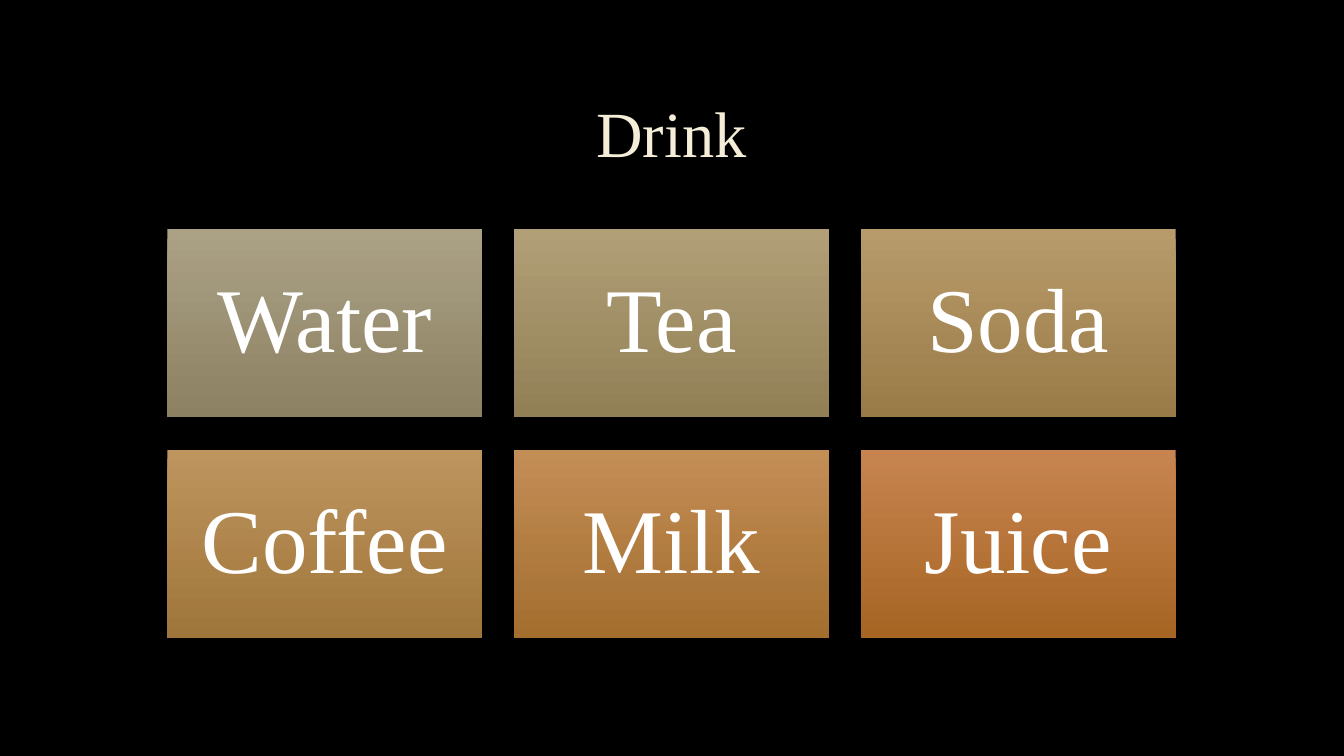
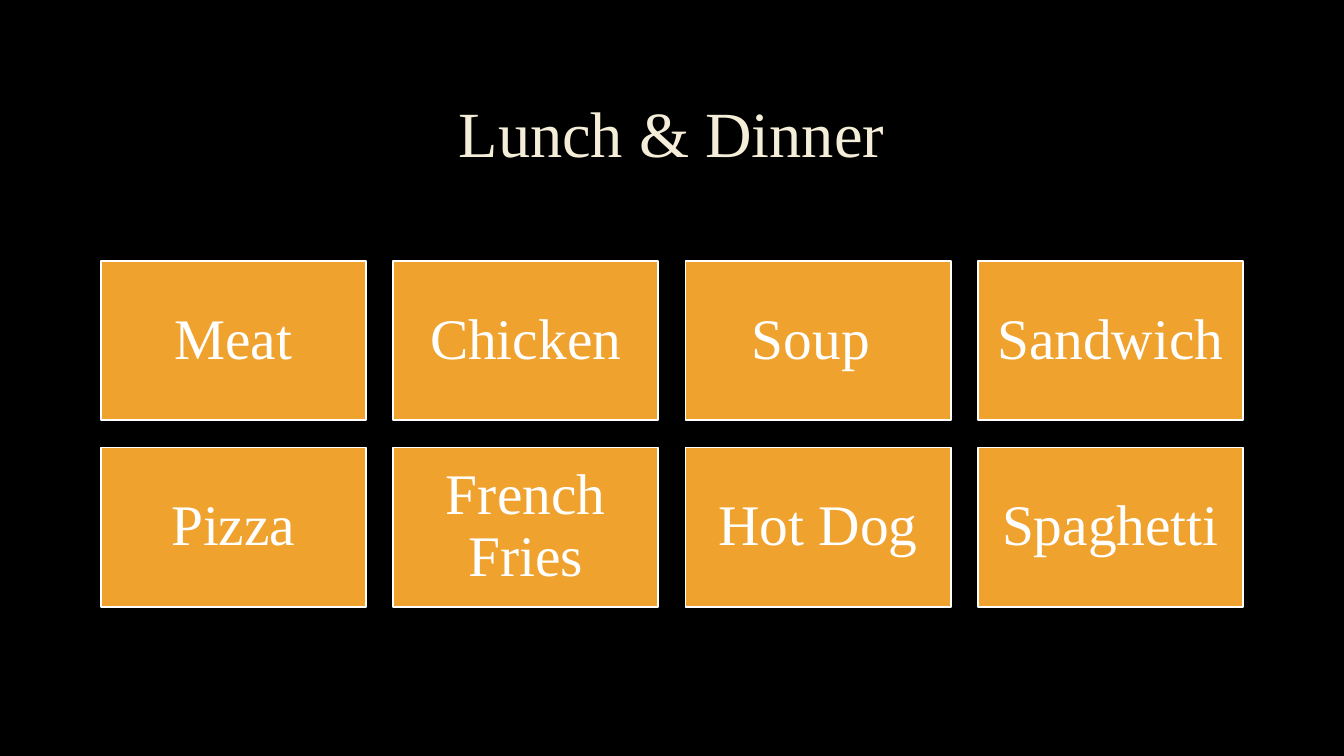
from pptx import Presentation
from pptx import util as u
from pptx.dml import color
from pptx.enum import shapes, text


def tint(code):
    return color.RGBColor.from_string(code)


class Deck:
    font = "Times New Roman"
    back, cream, white, gold = "000000", "F4EDD8", "FFFFFF", "F0A22E"

    def __init__(self):
        self.prs = Presentation()
        self.prs.slide_width = u.Inches(13.33)
        self.prs.slide_height = u.Inches(7.5)
        fill = self.prs.slide_master.background.fill
        fill.solid()
        fill.fore_color.rgb = tint(self.back)

    def label(self, shape, words, size, ink, inset):
        """Centre a label in a shape."""
        frame = shape.text_frame
        frame.word_wrap = True
        frame.auto_size = text.MSO_AUTO_SIZE.NONE
        frame.vertical_anchor = text.MSO_ANCHOR.MIDDLE
        frame.margin_left = frame.margin_right = u.Inches(inset)
        frame.margin_top = frame.margin_bottom = u.Inches(inset)
        para = frame.paragraphs[0]
        para.alignment = text.PP_ALIGN.CENTER
        para.line_spacing = 0.9
        run = para.add_run()
        run.text = words
        run.font.name = self.font
        run.font.size = u.Pt(size)
        run.font.color.rgb = tint(ink)

    def page(self, title):
        """Start a slide with its title."""
        self.slide = self.prs.slides.add_slide(self.prs.slide_layouts[5])
        head = self.slide.shapes.title
        head.left, head.top = u.Inches(1), u.Inches(0.67)
        head.width, head.height = u.Inches(11.32), u.Inches(1.38)
        self.label(head, title, 46, self.cream, 0.05)

    def tile(self, left, top, wide, high, words, size, inset):
        """Add a plain box with a label."""
        box = self.slide.shapes.add_shape(
            shapes.MSO_SHAPE.RECTANGLE, u.Inches(left), u.Inches(top),
            u.Inches(wide), u.Inches(high))
        box.shadow.inherit = False
        self.label(box, words, size, self.white, inset)
        return box

    def grid(self, names, cols, left, top, wide, high, gap, size, inset):
        """Lay labelled boxes out row by row."""
        boxes = []
        for i, name in enumerate(names):
            row, col = divmod(i, cols)
            boxes.append(self.tile(
                left + col * (wide + gap), top + row * (high + gap),
                wide, high, name, size, inset))
        return boxes

    def fade(self, box, first, last):
        """Shade a box from top to bottom, without an outline."""
        box.fill.gradient()
        box.fill.gradient_angle = 270
        for stop, code, place in zip(box.fill.gradient_stops, (first, last), (0, 1)):
            stop.color.rgb = tint(code)
            stop.position = place
        box.line.fill.background()

    def flat(self, box):
        """Fill a box with gold and outline it."""
        box.fill.solid()
        box.fill.fore_color.rgb = tint(self.gold)
        box.line.color.rgb = tint(self.white)
        box.line.width = u.Pt(1.25)


def main():
    deck = Deck()

    # Drinks: each box has its own shade
    drinks = {
        "Water": ("ABA185", "8C8162"),
        "Tea": ("B19F77", "917F56"),
        "Soda": ("B89B6A", "987B47"),
        "Coffee": ("BF955F", "9E753A"),
        "Milk": ("C38D56", "A36E2E"),
        "Juice": ("C78450", "A66523"),
    }
    deck.page("Drink")
    boxes = deck.grid(drinks, cols=3, left=1.66, top=2.27, wide=3.12,
                      high=1.87, gap=0.32, size=65, inset=0.27)
    for box, shades in zip(boxes, drinks.values()):
        deck.fade(box, *shades)

    # Meals: all boxes alike
    meals = ["Meat", "Chicken", "Soup ", "Sandwich",
             "Pizza", "French Fries", "Hot Dog", "Spaghetti"]
    deck.page("Lunch & Dinner")
    for box in deck.grid(meals, cols=4, left=1, top=2.59, wide=2.63,
                         high=1.58, gap=0.27, size=41, inset=0.17):
        deck.flat(box)

    deck.prs.save("out.pptx")


if __name__ == "__main__":
    main()
